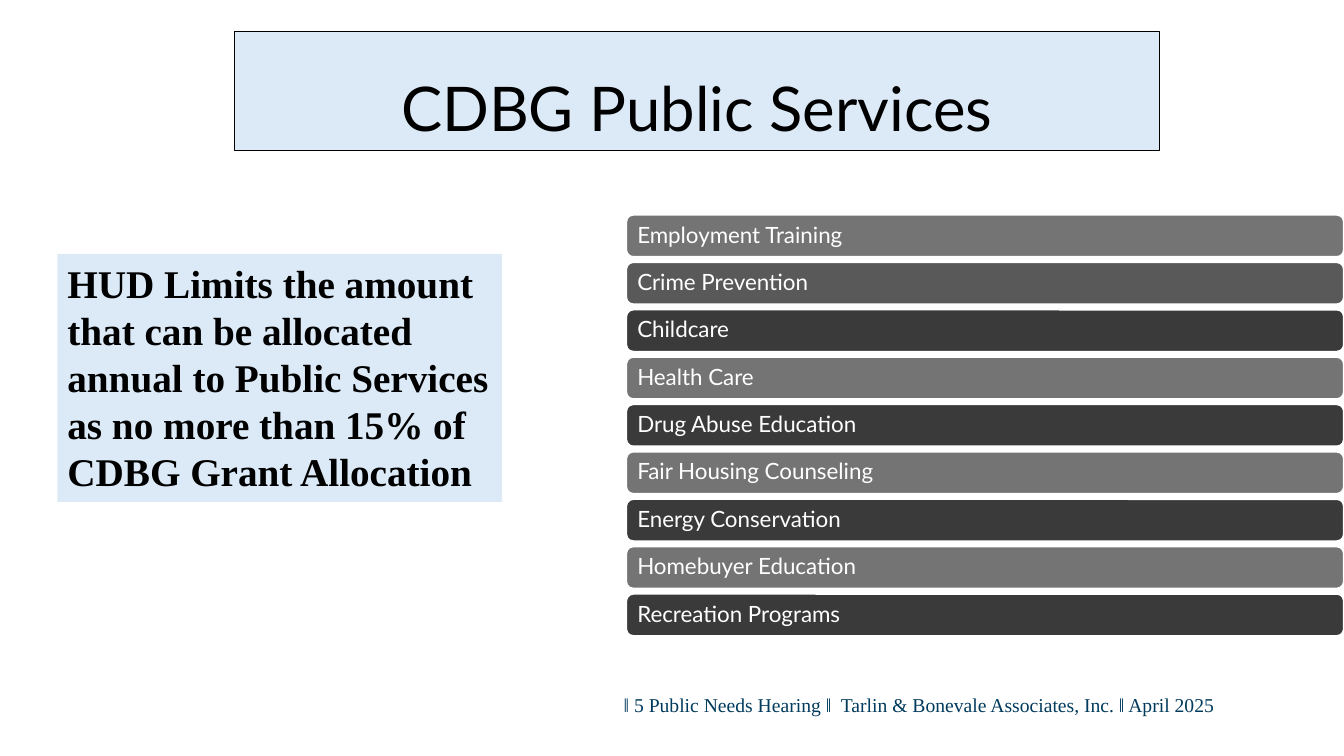
from pptx import Presentation
from pptx.dml.color import RGBColor
from pptx.enum.shapes import MSO_SHAPE as Shape
from pptx.enum.text import MSO_ANCHOR as Anchor, PP_ALIGN as Align
from pptx.util import Pt

PX = 9144


def color(value):
    return RGBColor.from_string(value)


def add_block(kind, box, text, fill, line, font, frame, paragraph):
    block = slide.shapes.add_shape(kind, *[v * PX for v in box])
    block.shadow.inherit = False
    if fill:
        block.fill.solid()
        block.fill.fore_color.rgb = color(fill)
    else:
        block.fill.background()
    if line:
        block.line.color.rgb = color(line[0])
        block.line.width = Pt(line[1])
    else:
        block.line.fill.background()
    content = block.text_frame
    content.word_wrap = True
    first = content.paragraphs[0]
    run = first.add_run()
    run.text = text
    run.font.color.rgb = color(font["color"])
    letters = {"name": font["name"], "size": Pt(font["size"]), "bold": font.get("bold", False)}
    for target, values in ((content, frame), (first, paragraph), (run.font, letters)):
        for key, value in values.items():
            setattr(target, key, value)
    return block


deck = Presentation()
deck.slide_width = 1333 * PX
deck.slide_height = 750 * PX
slide = deck.slides.add_slide(deck.slide_layouts[6])

add_block(
    Shape.RECTANGLE, (233, 31, 917, 118), "CDBG Public Services", "DCEAF7", ("000000", 0.75),
    {"name": "Lato", "size": 44, "color": "000000"},
    {"vertical_anchor": Anchor.BOTTOM},
    {"alignment": Align.CENTER, "line_spacing": 0.9},
)

LIGHT, MEDIUM, DARK = "747474", "595959", "3A3A3A"
services = [
    ("Employment Training", LIGHT),
    ("Crime Prevention", MEDIUM),
    ("Childcare", DARK),
    ("Health Care", LIGHT),
    ("Drug Abuse Education", DARK),
    ("Fair Housing Counseling", LIGHT),
    ("Energy Conservation", DARK),
    ("Homebuyer Education", LIGHT),
    ("Recreation Programs", DARK),
]
insets = {f"margin_{side}": 9 * PX for side in ("left", "right", "top", "bottom")}
for row, (service, shade) in enumerate(services):
    add_block(
        Shape.ROUNDED_RECTANGLE, (621, 213 + row * 47, 712, 42), service, shade, ("FFFFFF", 1.5),
        {"name": "Lato", "size": 16, "color": "FFFFFF"},
        {"vertical_anchor": Anchor.MIDDLE, **insets},
        {"alignment": Align.LEFT, "line_spacing": 0.9},
    )

add_block(
    Shape.RECTANGLE, (57, 252, 441, 246),
    "HUD Limits the amount that can be allocated annual to Public Services "
    "as no more than 15% of CDBG Grant Allocation",
    "DCEAF7", None,
    {"name": "Times New Roman", "size": 28, "color": "000000", "bold": True},
    {"vertical_anchor": Anchor.TOP},
    {"alignment": Align.LEFT, "space_after": Pt(6)},
)

add_block(
    Shape.RECTANGLE, (168, 679, 1047, 40),
    "‖ 5 Public Needs Hearing ‖  Tarlin & Bonevale Associates, Inc. ‖ April 2025",
    None, None,
    {"name": "Times New Roman", "size": 14, "color": "003A5C"},
    {"vertical_anchor": Anchor.MIDDLE},
    {"alignment": Align.RIGHT},
)

deck.save("out.pptx")
